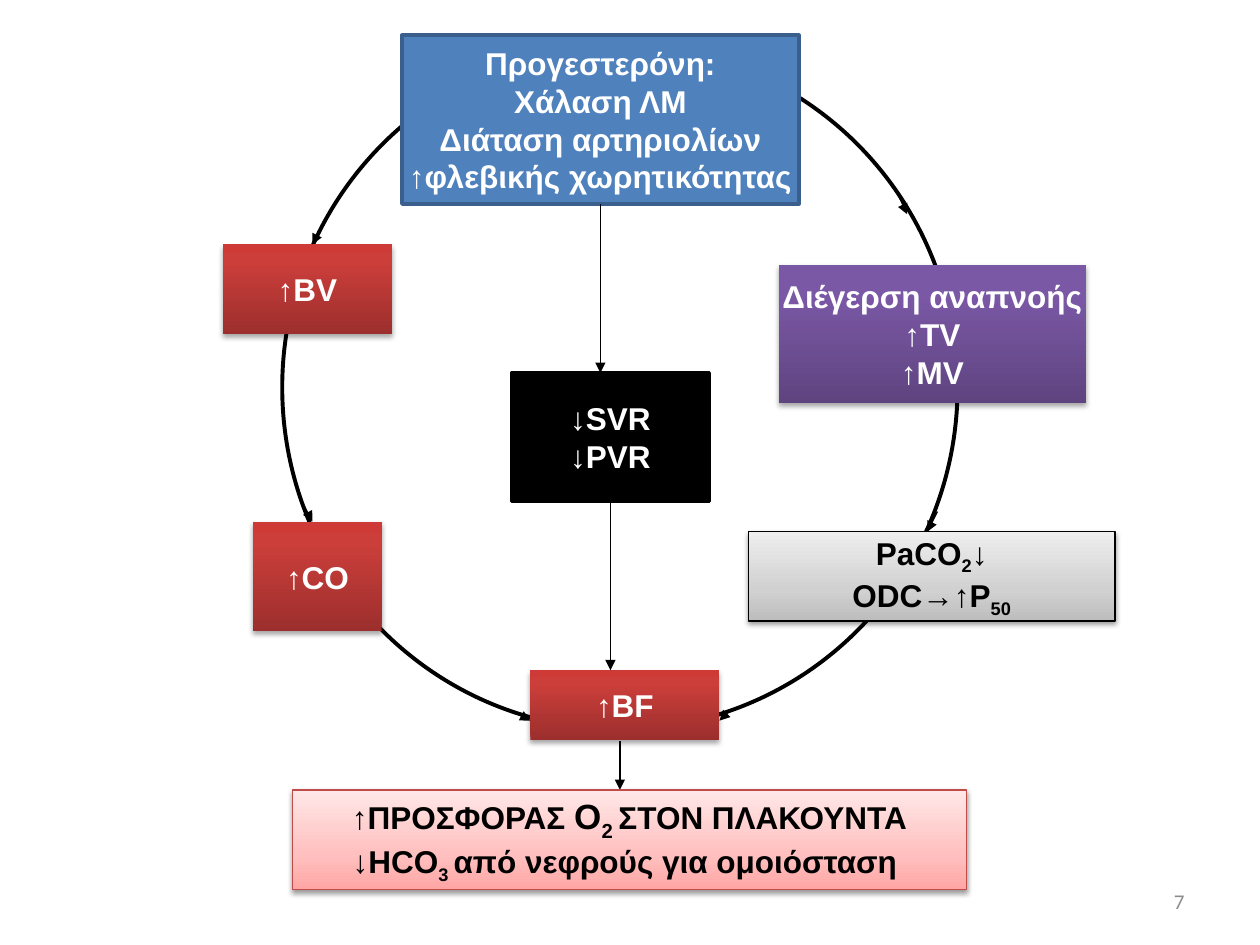
from dataclasses import dataclass

from lxml.etree import SubElement
from pptx import Presentation
from pptx.dml.color import RGBColor
from pptx.enum.shapes import MSO_CONNECTOR, MSO_SHAPE
from pptx.enum.text import MSO_ANCHOR, PP_ALIGN
from pptx.oxml.ns import qn
from pptx.util import Inches, Pt


@dataclass(frozen=True)
class Box:
    left: float
    top: float
    width: float
    height: float

    def inside(self, left, top, width, height):
        return Box(self.left + left, self.top + top, width, height)

    def point(self, x, y):
        return Inches(self.left + x), Inches(self.top + y)

    def lengths(self):
        return [Inches(v) for v in (self.left, self.top, self.width, self.height)]


@dataclass(frozen=True)
class Style:
    fill: tuple  # one colour, or (position, colour) stops from bottom to top
    text: str
    line: str = ""
    line_width: float = 0.75
    shadow: tuple = ()  # opacity in percent, distance in points


class Theme:
    black, white, grey = "000000", "FFFFFF", "8C8C8C"
    font, number_font = "Arial", "Calibri"
    body, large, number = 18, 20, 12
    shadow_blur = 3.1
    ring_width, arrow_width = 2.25, 0.75
    blue = Style(("4F81BD",), white, "3A5F8C", 2)
    solid = Style((black,), white, black, 2)
    red = Style(((0, "9C2F2D"), (80, "CB3E3A"), (100, "CE3B37")), white,
                shadow=(35, 1.8))
    purple = Style(((0, "5F4480"), (80, "7B58A6"), (100, "7C57A8")), white,
                   shadow=(35, 1.8))
    silver = Style(((0, "BDBDBD"), (35, "D1D1D1"), (100, "EEEEEE")), black,
                   black, shadow=(38, 1.6))
    pink = Style(((0, "FFA6A5"), (35, "FFC0BF"), (100, "FFE7E7")), black,
                 "BF4C48", shadow=(38, 1.6))


def color(value):
    return RGBColor.from_string(value)


def set_font(span, size, tint, name=Theme.font, bold=True):
    span.font.name = name
    span.font.size = Pt(size)
    span.font.bold = bold
    span.font.color.rgb = color(tint)


def paint(shape, stops):
    if len(stops) == 1:
        shape.fill.solid()
        shape.fill.fore_color.rgb = color(stops[0])
        return
    shape.fill.gradient()
    shape.fill.gradient_angle = 90
    stop_list = next(shape.element.spPr.iter(qn("a:gsLst")))
    for old in list(stop_list):
        stop_list.remove(old)
    for position, tint in stops:
        stop = SubElement(stop_list, qn("a:gs"), pos=str(position * 1000))
        SubElement(stop, qn("a:srgbClr"), val=tint)


def add_shadow(shape, opacity, distance):
    effects = shape.element.spPr.find(qn("a:effectLst"))
    outer = SubElement(effects, qn("a:outerShdw"), blurRad=str(Pt(Theme.shadow_blur)),
                       dist=str(Pt(distance)), dir="5400000", rotWithShape="0")
    tint = SubElement(outer, qn("a:srgbClr"), val=Theme.black)
    SubElement(tint, qn("a:alpha"), val=str(opacity * 1000))


def write_lines(frame, lines, tint):
    """Each line is a string or a list of (text, size, is_subscript)."""
    frame.word_wrap = False
    frame.vertical_anchor = MSO_ANCHOR.MIDDLE
    for index, line in enumerate(lines):
        para = frame.paragraphs[0] if index == 0 else frame.add_paragraph()
        para.alignment = PP_ALIGN.CENTER
        parts = [(line, Theme.body, False)] if isinstance(line, str) else line
        for text, size, subscript in parts:
            span = para.add_run()
            span.text = text
            set_font(span, size, tint)
            if subscript:
                span.font._element.set("baseline", "-25000")


def add_card(page, box, style, lines):
    card = page.shapes.add_shape(MSO_SHAPE.RECTANGLE, *box.lengths())
    card.shadow.inherit = False
    paint(card, style.fill)
    if style.line:
        card.line.color.rgb = color(style.line)
        card.line.width = Pt(style.line_width)
    else:
        card.line.fill.background()
    if style.shadow:
        add_shadow(card, *style.shadow)
    write_lines(card.text_frame, lines, style.text)
    return card


def add_arrow(page, start, end):
    arrow = page.shapes.add_connector(MSO_CONNECTOR.STRAIGHT, *start, *end)
    arrow.line.color.rgb = color(Theme.black)
    arrow.line.width = Pt(Theme.arrow_width)
    SubElement(arrow.line._get_or_add_ln(), qn("a:tailEnd"), type="triangle")
    SubElement(arrow._element.spPr, qn("a:effectLst"))
    return arrow


def draw_cycle(page, area):
    # Ring behind the cards
    ring = page.shapes.add_shape(MSO_SHAPE.OVAL, *area.inside(0.47, 0.08, 5.36, 5.43).lengths())
    ring.shadow.inherit = False
    ring.fill.background()
    ring.line.color.rgb = color(Theme.black)
    ring.line.width = Pt(Theme.ring_width)

    # Cards on the ring and in its centre
    body = Theme.body
    gas_lines = [[("PaCO", body, False), ("2", body, True), ("↓", body, False)],
                 [("ODC→↑P", body, False), ("50", body, True)]]
    progesterone = add_card(
        page, area.inside(1.42, 0, 3.15, 1.34), Theme.blue,
        ["Προγεστερόνη:", "Χάλαση ΛΜ", "Διάταση αρτηριολίων", "↑φλεβικής χωρητικότητας"])
    add_card(page, area.inside(0, 1.66, 1.34, 0.71), Theme.red, ["↑BV"])
    add_card(page, area.inside(4.41, 1.82, 2.44, 1.1), Theme.purple,
             ["Διέγερση αναπνοής", "↑TV", "↑MV"])
    add_card(page, area.inside(0.24, 3.86, 1.02, 0.87), Theme.red, ["↑CO"])
    add_card(page, area.inside(4.17, 3.94, 2.91, 0.71), Theme.silver, gas_lines)
    resistance = add_card(page, area.inside(2.29, 2.68, 1.57, 1.02), Theme.solid,
                          ["↓SVR", "↓PVR"])
    flow = add_card(page, area.inside(2.44, 5.04, 1.5, 0.55), Theme.red, ["↑BF"])

    # Arrowheads along the ring
    for start, end in [((0.79, 1.5), (0.71, 1.66)), ((5.36, 1.27), (5.43, 1.42)),
                       ((0.63, 3.71), (0.71, 3.86)), ((5.67, 3.78), (5.59, 3.94)),
                       ((4.02, 5.36), (3.94, 5.44)), ((2.29, 5.36), (2.44, 5.44))]:
        add_arrow(page, area.point(*start), area.point(*end))

    # Central arrows, straight down from the middle of each card
    for upper, lower in [(progesterone, resistance), (resistance, flow)]:
        middle = upper.left + upper.width // 2
        arrow = add_arrow(page, (middle, upper.top + upper.height), (middle, lower.top))
        arrow.begin_connect(upper, 2)


def draw_outcome(page, area):
    body, large = Theme.body, Theme.large
    lines = [[("↑ΠΡΟΣΦΟΡΑΣ ", body, False), ("Ο", large, False),
              ("2 ", large, True), ("ΣΤΟΝ ΠΛΑΚΟΥΝΤΑ", body, False)],
             [("↓HCO", body, False), ("3 ", body, True),
              ("από νεφρούς για ομοιόσταση ", body, False)]]
    add_arrow(page, area.point(2.6, 0), area.point(2.6, 0.39))
    add_card(page, area.inside(0, 0.39, area.width, 0.79), Theme.pink, lines)


def draw_page_number(page, area):
    frame = page.shapes.add_textbox(*area.lengths()).text_frame
    frame.word_wrap = True
    frame.vertical_anchor = MSO_ANCHOR.MIDDLE
    frame.text = "7"
    para = frame.paragraphs[0]
    para.alignment = PP_ALIGN.RIGHT
    set_font(para.runs[0], Theme.number, Theme.grey, Theme.number_font, False)


def main():
    deck = Presentation()
    deck.slide_width, deck.slide_height = Inches(10), Inches(7.5)
    page = deck.slides.add_slide(deck.slide_layouts[6])
    draw_page_number(page, Box(7.17, 6.95, 2.33, 0.4))
    draw_cycle(page, Box(1.77, 0.28, 7.08, 5.59))
    draw_outcome(page, Box(2.32, 5.88, 5.35, 1.18))
    deck.save("out.pptx")


if __name__ == "__main__":
    main()
